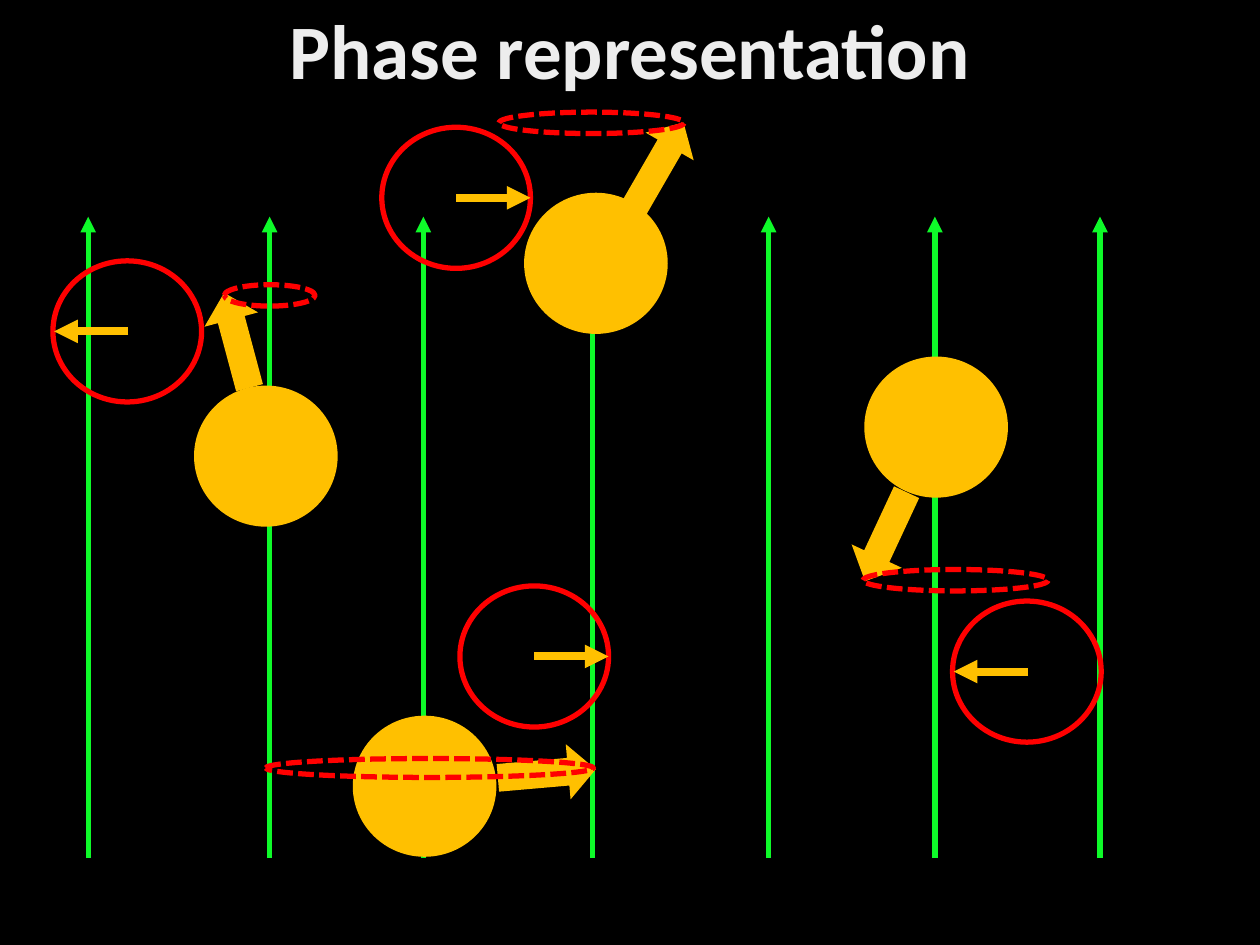
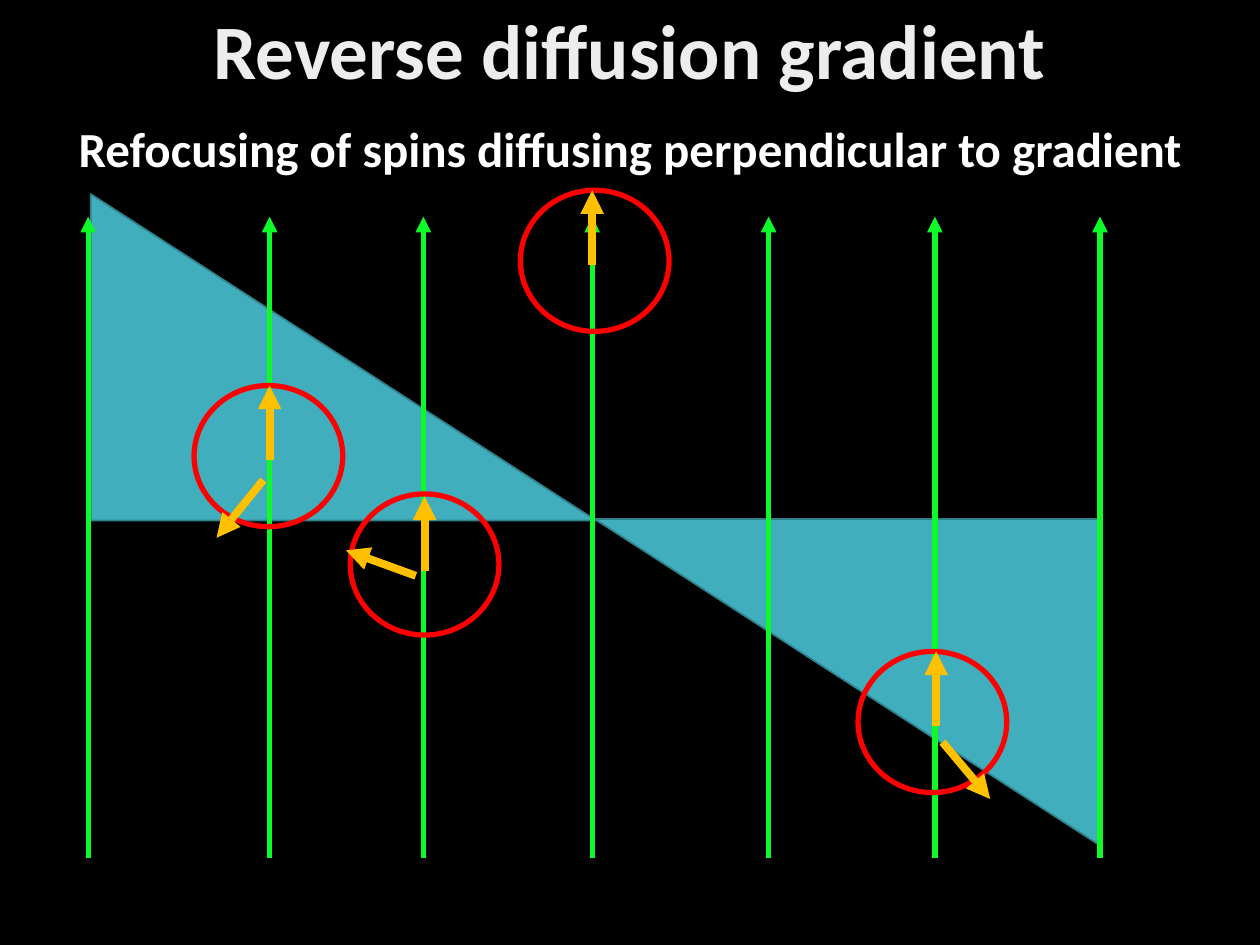
from dataclasses import dataclass
from math import cos, radians, sin

from lxml import etree
from pptx import Presentation
from pptx.dml.color import RGBColor
from pptx.enum.dml import MSO_LINE
from pptx.enum.shapes import MSO_CONNECTOR, MSO_SHAPE
from pptx.enum.text import MSO_ANCHOR, MSO_AUTO_SIZE, PP_ALIGN
from pptx.oxml import parse_xml
from pptx.oxml.ns import nsdecls, qn
from pptx.util import Inches, Pt

OVAL, WEDGE, ARROW = MSO_SHAPE.OVAL, MSO_SHAPE.RIGHT_TRIANGLE, MSO_SHAPE.UP_ARROW
STRAIGHT, DASH = MSO_CONNECTOR.STRAIGHT, MSO_LINE.SQUARE_DOT
CENTER, MIDDLE, FIXED = PP_ALIGN.CENTER, MSO_ANCHOR.MIDDLE, MSO_AUTO_SIZE.NONE

BLACK = RGBColor(0x00, 0x00, 0x00)
WHITE = RGBColor(0xFF, 0xFF, 0xFF)
GREEN = RGBColor(0x0E, 0xFA, 0x29)
GOLD = RGBColor(0xFF, 0xC0, 0x00)
RED = RGBColor(0xFF, 0x00, 0x00)
TEAL = RGBColor(0x41, 0xAE, 0xBD)
DARK = RGBColor(0x30, 0x81, 0x8C)
SHEEN = ((0, RGBColor(0xBF, 0xBF, 0xBF)), (28, RGBColor(0xED, 0xED, 0xED)), (100, WHITE))

# Grid of 100 columns by 75 rows
WIDTH, HEIGHT = Inches(10), Inches(7.5)
COL, ROW = WIDTH / 100, HEIGHT / 75

FIELD = (7, 21.4, 33.6, 47, 61, 74.2, 87.3)
TOP, FOOT = 17.2, 68.1
BALL = (11.4, 11.2)
RING = (11.8, 11.2)
BOLT = (4.4, 7.8)
REACH = 5.9
HEAD = {"name": "Calibri", "size": Pt(44), "bold": True}
NOTE = {"name": "Calibri", "size": Pt(28), "bold": True}


@dataclass(frozen=True)
class Box:
    x: float
    y: float
    w: float
    h: float

    def place(self) -> tuple[int, int, int, int]:
        return (round(self.x * COL), round(self.y * ROW),
                round(self.w * COL), round(self.h * ROW))


@dataclass(frozen=True)
class Spin:
    """A ball whose axis precesses around an orbit."""
    ball: tuple[float, float]
    bolt: tuple[float, float]
    turn: float
    orbit: Box


@dataclass(frozen=True)
class Hand:
    """A phase arrow: where it starts and its clockwise turn from up."""
    x: float
    y: float
    turn: float = 0


@dataclass(frozen=True)
class Dial:
    ring: tuple[float, float]
    hands: tuple[Hand, ...]


SPINS = (
    Spin((15.4, 30.6), (16.6, 23.1), -15, Box(17.8, 22.6, 7.2, 1.7)),
    Spin((41.6, 15.3), (50.1, 9.2), 30, Box(39.6, 8.9, 14.7, 1.7)),
    Spin((68.6, 28.3), (68.1, 38.7), 205, Box(68.5, 45.2, 14.7, 1.7)),
    Spin((28, 56.8), (41.2, 57.5), 85, Box(21.1, 60.2, 26, 1.5)),
)
PHASES = (
    Dial((4.2, 20.7), (Hand(10.2, 26.3, 270),)),
    Dial((30.3, 10.1), (Hand(36.2, 15.7, 90),)),
    Dial((36.5, 46.5), (Hand(42.4, 52.1, 90),)),
    Dial((75.6, 47.7), (Hand(81.6, 53.3, 270),)),
)
ECHOES = (
    Dial((15.4, 30.6), (Hand(21.4, 36.5), Hand(20.9, 38.1, 219))),
    Dial((41.3, 15.1), (Hand(47, 21),)),
    Dial((68.1, 51.7), (Hand(74.3, 57.6), Hand(74.8, 58.9, 140))),
    Dial((27.8, 39.2), (Hand(33.7, 45.3), Hand(33, 45.7, 290))),
)
RAMPS = ((Box(47.2, 41.2, 40.1, 25.9), 180), (Box(7.2, 15.4, 40.1, 25.9), 0))


def style(item, values: dict) -> None:
    for key, value in values.items():
        setattr(item, key, value)


def shape(slide, kind, box: Box, fill: RGBColor | None = None,
          line: RGBColor | None = None, width: float = 3, dash=None, turn: float = 0) -> None:
    item = slide.shapes.add_shape(kind, *box.place())
    item.shadow.inherit = False
    item.rotation = turn
    if fill is None:
        item.fill.background()
    else:
        item.fill.solid()
        item.fill.fore_color.rgb = fill
    if line is None:
        item.line.fill.background()
    else:
        item.line.color.rgb = line
        style(item.line, {"width": Pt(width), "dash_style": dash})


def arrow(slide, x: float, y: float, tip: tuple[float, float],
          color: RGBColor, width: float) -> None:
    ends = (x * COL, y * ROW, tip[0] * COL, tip[1] * ROW)
    item = slide.shapes.add_connector(STRAIGHT, *map(round, ends))
    item.line.color.rgb = color
    item.line.width = Pt(width)
    etree.SubElement(item.line._get_or_add_ln(), qn("a:tailEnd"), type="triangle")
    etree.SubElement(item._element.spPr, qn("a:effectLst"))


def write(frame, text: str, font: dict):
    part = frame.paragraphs[0]
    part.alignment = CENTER
    run = part.add_run()
    run.text = text
    style(run.font, font)
    return run


def start(deck, title: str):
    """Add a black slide with a shaded title."""
    slide = deck.slides.add_slide(deck.slide_layouts[5])
    slide.background.fill.solid()
    slide.background.fill.fore_color.rgb = BLACK
    head = slide.shapes.title
    spot = Box(6.9, -2.9, 86.2, 14.5).place()
    style(head, dict(zip(("left", "top", "width", "height"), spot)))
    frame = head.text_frame
    style(frame, {"vertical_anchor": MIDDLE, "word_wrap": True, "auto_size": FIXED})
    run = write(frame, title, HEAD)
    frame.paragraphs[0].line_spacing = 0.9
    stops = "".join(f'<a:gs pos="{at * 1000}"><a:srgbClr val="{color}"/></a:gs>'
                    for at, color in SHEEN)
    run.font._element.insert(0, parse_xml(
        f'<a:gradFill {nsdecls("a")}><a:gsLst>{stops}</a:gsLst>'
        f'<a:lin ang="{80 * 60000}" scaled="0"/></a:gradFill>'))
    return slide


def field(slide) -> None:
    for x in FIELD:
        arrow(slide, x, FOOT, (x, TOP), GREEN, 3)


def spin(slide, item: Spin) -> None:
    shape(slide, OVAL, Box(*item.ball, *BALL), GOLD)
    shape(slide, ARROW, Box(*item.bolt, *BOLT), GOLD, turn=item.turn)
    shape(slide, OVAL, item.orbit, line=RED, dash=DASH)


def dial(slide, item: Dial) -> None:
    shape(slide, OVAL, Box(*item.ring, *RING), line=RED)
    for hand in item.hands:
        turn = radians(hand.turn)
        tip = (hand.x + REACH * sin(turn), hand.y - REACH * cos(turn))
        arrow(slide, hand.x, hand.y, tip, GOLD, 4.5)


def phase(deck) -> None:
    slide = start(deck, "Phase representation")
    field(slide)
    for item in SPINS:
        spin(slide, item)
    for item in PHASES:
        dial(slide, item)


def reverse(deck) -> None:
    slide = start(deck, "Reverse diffusion gradient")
    # Gradient ramps behind the field lines
    for box, turn in RAMPS:
        shape(slide, WEDGE, box, TEAL, DARK, 1, turn=turn)
    field(slide)
    for item in ECHOES:
        dial(slide, item)
    # Subtitle
    note = slide.shapes.add_textbox(*Box(0, 8.9, 100, 5.7).place())
    note.text_frame.word_wrap = True
    run = write(note.text_frame, "Refocusing of spins diffusing perpendicular to gradient", NOTE)
    run.font.color.rgb = WHITE


def main() -> None:
    deck = Presentation()
    style(deck, {"slide_width": WIDTH, "slide_height": HEIGHT})
    phase(deck)
    reverse(deck)
    deck.save("out.pptx")


if __name__ == "__main__":
    main()
